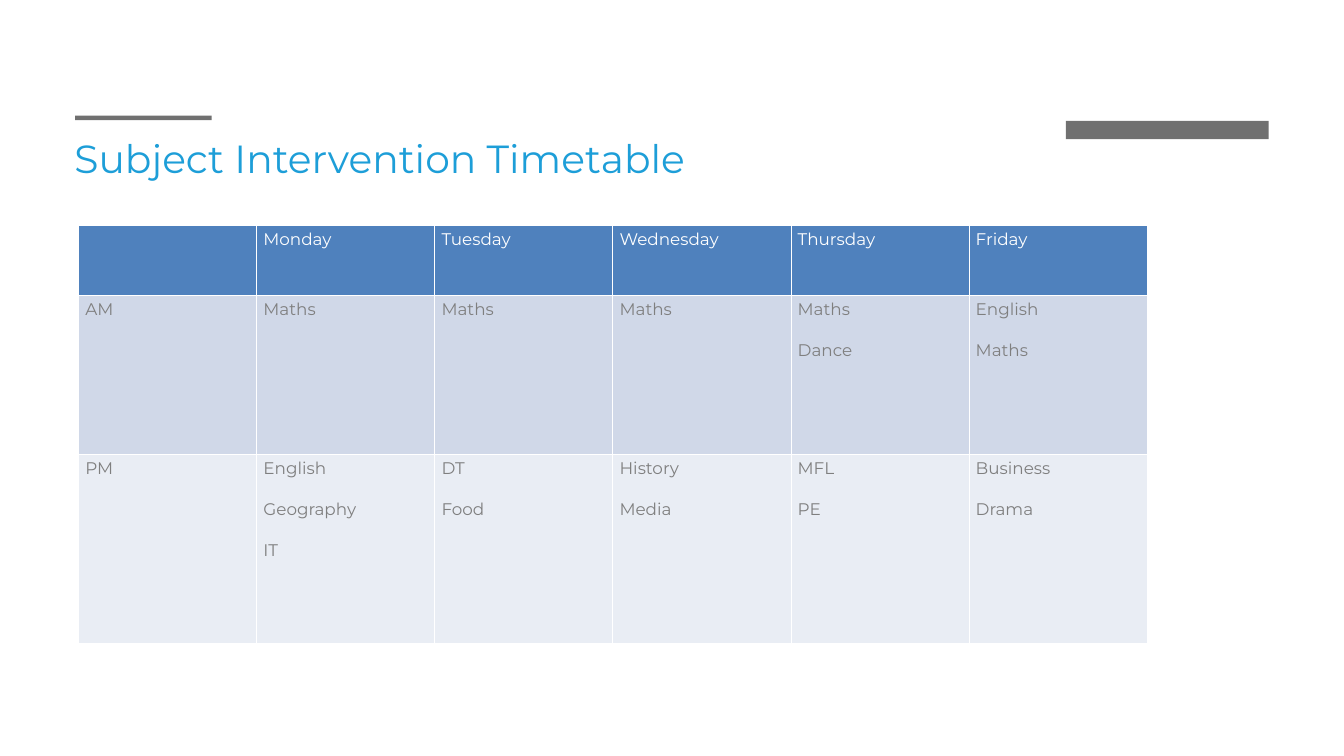
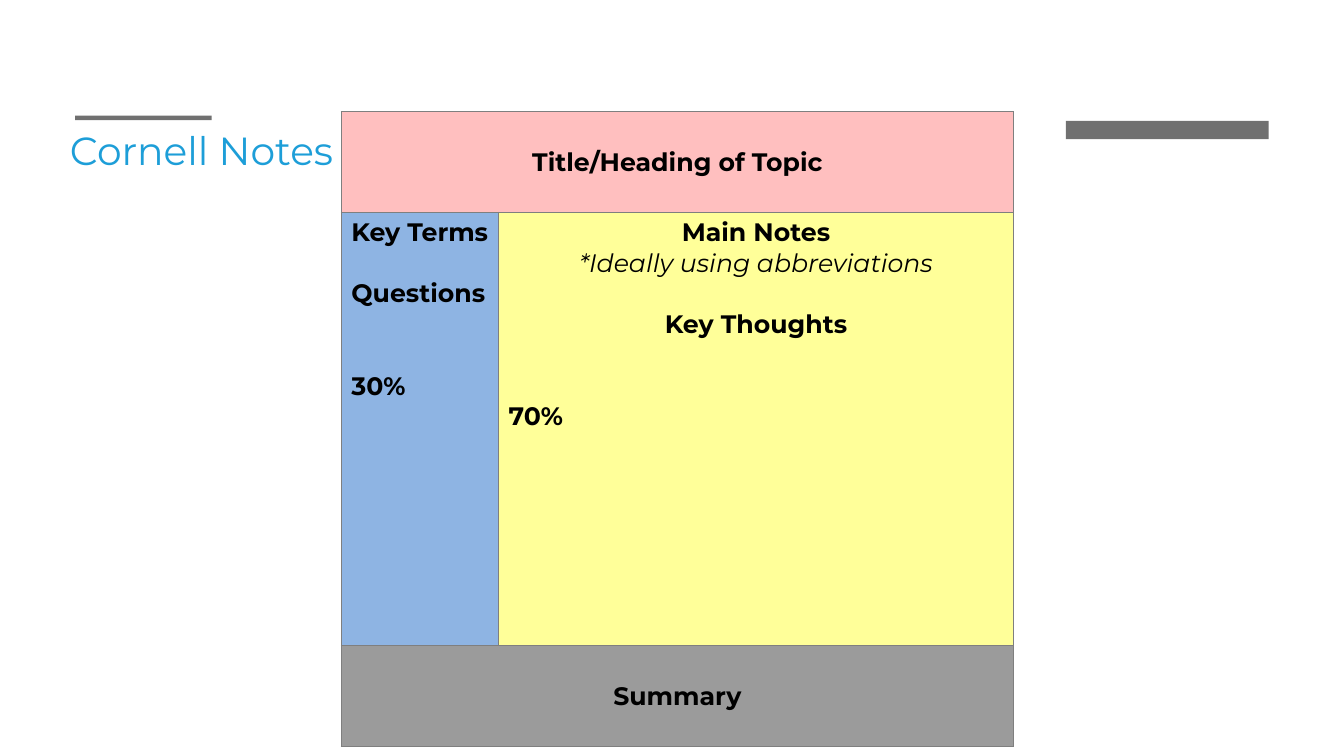
from lxml import etree
from pptx import Presentation
from pptx import util as u
from pptx.dml.color import RGBColor
from pptx.enum import shapes, text
from pptx.oxml.ns import qn

WIDTH, HEIGHT = 20, 11.25
FONT = "Montserrat"
LINE = 1.22  # height of one text line, as a share of the font size
COLOURS = {
    "title": "1D9ED8", "bar": "707070", "white": "FFFFFF", "black": "000000",
    "grey": "7F7F7F", "header": "4F81BD", "am": "D0D8E8", "pm": "E9EDF4",
    "heading": "FFBFBF", "terms": "8EB4E3", "notes": "FFFF99", "summary": "9B9B9B",
}

# Content: left, top, width, height of the bars and titles
BARS = [(1.12, 1.72, 2.03, 0.07), (15.86, 1.8, 3.02, 0.27)]
TIMETABLE_TITLE = ("Subject Intervention Timetable", (1.01, 1.66, 14.23, 1.37))
CORNELL_TITLE = ("Cornell Notes", (0.94, 1.83, 13.5, 0.8))

DAYS = ["Monday", "Tuesday", "Wednesday", "Thursday", "Friday"]
SESSIONS = {
    "AM": [["Maths"], ["Maths"], ["Maths"], ["Maths", "Dance"], ["English", "Maths"]],
    "PM": [["English", "Geography", "IT"], ["DT", "Food"], ["History", "Media"],
           ["MFL", "PE"], ["Business", "Drama"]],
}

# Each line of the notes page: wording, empty lines above, style, centred
KEY_TERMS = [("Key Terms", 0, "bold", False), ("Questions", 1, "bold", False),
             ("30%", 2, "bold", False)]
MAIN_NOTES = [("Main Notes", 0, "bold", True),
              ("*Ideally using abbreviations", 0, "italic", True),
              ("Key Thoughts", 1, "bold", True), ("70%", 2, "bold", False)]
HEADING = [("Title/Heading of Topic", 0, "bold", True)]
SUMMARY = [("Summary", 0, "bold", True)]


def rgb(name):
    return RGBColor.from_string(COLOURS[name])


def write(frame, lines, size, colour):
    frame.text = "\n".join(line[0] for line in lines)
    for paragraph, (_, gap, style, centred) in zip(frame.paragraphs, lines):
        paragraph.alignment = text.PP_ALIGN.CENTER if centred else text.PP_ALIGN.LEFT
        if gap:
            paragraph.space_before = u.Pt(round(gap * size * LINE))
        for run in paragraph.runs:
            font = run.font
            font.name, font.size = FONT, u.Pt(size)
            font.bold, font.italic = style == "bold", style == "italic"
            font.color.rgb = rgb(colour)


def plain(words):
    """Lines of a timetable cell, one empty line apart."""
    return [(word, min(i, 1), "plain", False) for i, word in enumerate(words)]


def add_page(deck, title, box):
    page = deck.slides.add_slide(deck.slide_layouts[6])
    for bar_box in BARS:
        bar = page.shapes.add_shape(shapes.MSO_SHAPE.RECTANGLE, *map(u.Inches, bar_box))
        bar.shadow.inherit = False
        bar.fill.solid()
        bar.fill.fore_color.rgb = rgb("bar")
        bar.line.fill.background()
    frame = page.shapes.add_textbox(*map(u.Inches, box)).text_frame
    frame.word_wrap = True
    frame.vertical_anchor = text.MSO_ANCHOR.MIDDLE
    write(frame, plain([title]), 42, "title")
    return page


def add_grid(page, left, top, columns, rows):
    grid = page.shapes.add_table(
        len(rows), len(columns), u.Inches(left), u.Inches(top),
        u.Inches(sum(columns)), u.Inches(sum(rows))).table
    grid.first_row = grid.horz_banding = False
    for column, width in zip(grid.columns, columns):
        column.width = u.Inches(width)
    for row, height in zip(grid.rows, rows):
        row.height = u.Inches(height)
    return grid


def paint(cell, fill, border):
    cell.fill.solid()
    cell.fill.fore_color.rgb = rgb(fill)
    properties = cell._tc.get_or_add_tcPr()
    for place, side in enumerate(("lnL", "lnR", "lnT", "lnB")):
        line = etree.Element(qn("a:" + side), w=str(u.Pt(1)))
        solid = etree.SubElement(line, qn("a:solidFill"))
        etree.SubElement(solid, qn("a:srgbClr"), val=COLOURS[border])
        properties.insert(place, line)


def timetable(deck):
    page = add_page(deck, *TIMETABLE_TITLE)
    grid = add_grid(page, 1.17, 3.36, [2.65] * (len(DAYS) + 1), [1.04, 2.37, 2.81])
    rows = [("header", "white", [[""]] + [[day] for day in DAYS])]
    rows += [(name.lower(), "grey", [[name]] + subjects)
             for name, subjects in SESSIONS.items()]
    for r, (fill, colour, entries) in enumerate(rows):
        for c, words in enumerate(entries):
            cell = grid.cell(r, c)
            write(cell.text_frame, plain(words), 18, colour)
            paint(cell, fill, "white")


def cornell_notes(deck):
    page = add_page(deck, *CORNELL_TITLE)
    grid = add_grid(page, 5.08, 1.66, [2.34, 7.66], [1.5, 6.45, 1.5])
    parts = [(0, 0, HEADING, "heading"), (1, 0, KEY_TERMS, "terms"),
             (1, 1, MAIN_NOTES, "notes"), (2, 0, SUMMARY, "summary")]
    for r, c, lines, fill in parts:
        cell = grid.cell(r, c)
        cell.margin_left = cell.margin_right = u.Inches(0.15)
        cell.margin_top = cell.margin_bottom = u.Inches(0.07)
        write(cell.text_frame, lines, 27, "black")
        paint(cell, fill, "grey")
        if r != 1:  # the heading and the summary span the page
            paint(grid.cell(r, 1), fill, "grey")
            cell.merge(grid.cell(r, 1))
            cell.vertical_anchor = text.MSO_ANCHOR.MIDDLE


def main():
    deck = Presentation()
    deck.slide_width, deck.slide_height = u.Inches(WIDTH), u.Inches(HEIGHT)
    timetable(deck)
    cornell_notes(deck)
    deck.save("out.pptx")


if __name__ == "__main__":
    main()
